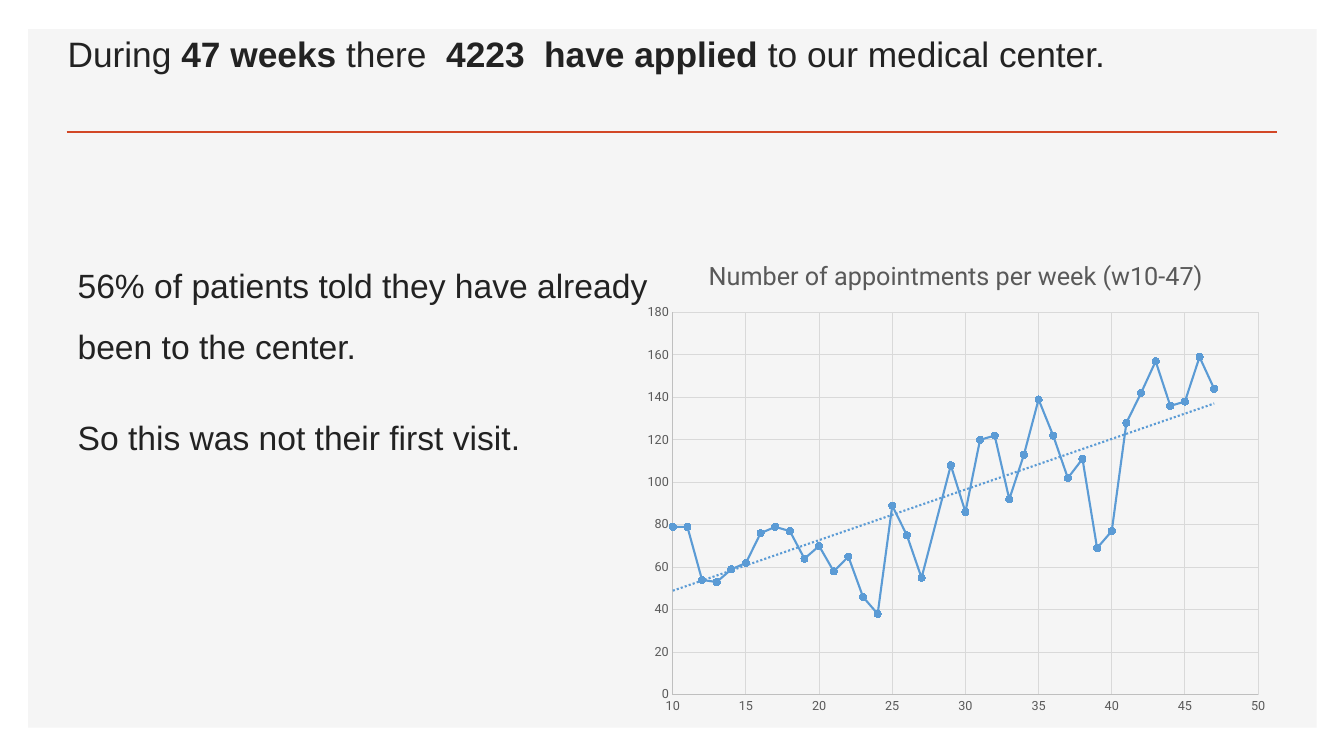
from lxml import etree
from pptx import Presentation
from pptx.chart.data import XyChartData
from pptx.dml.color import RGBColor
from pptx.enum.chart import XL_CHART_TYPE as ChartType, XL_MARKER_STYLE as Marker
from pptx.enum.chart import XL_TICK_MARK as TickMark
from pptx.enum.shapes import MSO_CONNECTOR as Connector, MSO_SHAPE as Shape
from pptx.enum.text import MSO_ANCHOR as Anchor, MSO_AUTO_SIZE as AutoSize, PP_ALIGN as Align
from pptx.oxml import parse_xml
from pptx.oxml.ns import nsdecls, qn
from pptx.util import Inches, Pt

COLORS = {
    "panel": "F5F5F5", "rule": "D24726", "text": "222222", "series": "5B9BD5",
    "label": "595959", "axis": "BFBFBF", "grid": "D9D9D9",
}
WEEKS = [*range(10, 28), *range(29, 48)]
APPOINTMENTS = [
    79, 79, 54, 53, 59, 62, 76, 79, 77, 64, 70, 58, 65, 46, 38, 89, 75, 55,
    108, 86, 120, 122, 92, 113, 139, 122, 102, 111, 69, 77, 128, 142, 157,
    136, 138, 159, 144,
]


def color(name):
    return RGBColor.from_string(COLORS[name])


def write(paragraph, runs, size, font="Arial", fill="text", line_spacing=1.0, before=0, after=0):
    """Fill a left-aligned, unbulleted paragraph with (text, bold) runs."""
    properties = paragraph._p.get_or_add_pPr()
    properties.set("marL", "0")
    properties.set("indent", "0")
    etree.SubElement(properties, qn("a:buNone"))
    paragraph.alignment = Align.LEFT
    paragraph.line_spacing = line_spacing
    paragraph.space_before, paragraph.space_after = Pt(before), Pt(after)
    for text, bold in runs:
        run = paragraph.add_run()
        run.text = text
        run.font.name, run.font.size, run.font.bold = font, Pt(size), bold
        run.font.color.rgb = color(fill)


def place(shape, box):
    shape.left, shape.top, shape.width, shape.height = map(Inches, box)


def style_line(line, name, width):
    line.color.rgb = color(name)
    line.width = Pt(width)


def add_background(slide, box):
    """Put the panel and the heading rule behind the placeholders."""
    left, top, width, height = box
    panel = slide.shapes.add_shape(Shape.RECTANGLE, *map(Inches, box))
    panel.shadow.inherit = False
    panel.fill.solid()
    panel.fill.fore_color.rgb = color("panel")
    panel.line.fill.background()

    rule_y = Inches(top + 1.02)
    rule = slide.shapes.add_connector(
        Connector.STRAIGHT, Inches(left + 0.38), rule_y, Inches(left + width - 0.39), rule_y)
    style_line(rule.line, "rule", 2)
    etree.SubElement(rule.element.spPr, qn("a:effectLst"))

    tree = panel.element.getparent()
    for index, shape in enumerate((panel, rule)):
        tree.insert(2 + index, shape.element)


def add_heading(slide, box):
    title = slide.shapes.title
    place(title, box)
    frame = title.text_frame
    frame.auto_size, frame.word_wrap = AutoSize.NONE, True
    frame.vertical_anchor = Anchor.BOTTOM
    frame.margin_bottom = Inches(0.45)
    write(frame.paragraphs[0], [
        ("During ", False), ("47 weeks ", True), ("there  ", False),
        ("4223  have applied ", True), ("to our medical center.", False),
    ], size=25.2)


def add_findings(slide, box):
    body = slide.placeholders[1]
    place(body, box)
    frame = body.text_frame
    frame.auto_size, frame.word_wrap = AutoSize.NONE, True
    frame.vertical_anchor = Anchor.TOP
    findings = (
        "56% of patients told they have already been to the center.",
        "So this was not their first visit.",
    )
    for index, text in enumerate(findings):
        paragraph = frame.add_paragraph() if index else frame.paragraphs[0]
        write(paragraph, [(text, False)], size=24, line_spacing=1.5,
              before=10 if index else 0, after=12)


def style_axis(axis, low, high, step):
    axis.minimum_scale, axis.maximum_scale, axis.major_unit = low, high, step
    axis.major_tick_mark = axis.minor_tick_mark = TickMark.NONE
    axis.has_major_gridlines = True
    style_line(axis.major_gridlines.format.line, "grid", 0.75)
    style_line(axis.format.line, "axis", 0.75)
    font = axis.tick_labels.font
    font.name, font.size = "Roboto", Pt(9)
    font.color.rgb = color("label")


def add_trend_line(series):
    trend = parse_xml(
        f'<c:trendline {nsdecls("c", "a")}><c:spPr><a:ln w="{Pt(1.5)}"><a:solidFill>'
        f'<a:srgbClr val="{COLORS["series"]}"/></a:solidFill><a:prstDash val="sysDot"/></a:ln>'
        '</c:spPr><c:trendlineType val="linear"/><c:dispRSqr val="0"/><c:dispEq val="0"/>'
        '</c:trendline>')
    series._element.find(qn("c:xVal")).addprevious(trend)


def fix_plot_area(chart, x, y, w, h):
    """Set the inner plot area as fractions of the chart."""
    plot_area = chart._chartSpace.chart.plotArea
    for old in plot_area.findall(qn("c:layout")):
        plot_area.remove(old)
    sizes = "".join(f'<c:{key} val="{value}"/>' for key, value in zip("xywh", (x, y, w, h)))
    plot_area.insert(0, parse_xml(
        f'<c:layout {nsdecls("c")}><c:manualLayout><c:layoutTarget val="inner"/>'
        f'<c:xMode val="edge"/><c:yMode val="edge"/>{sizes}</c:manualLayout></c:layout>'))


def add_appointments_chart(slide, box):
    data = XyChartData()
    points = data.add_series("Series 1")
    for week, count in zip(WEEKS, APPOINTMENTS):
        points.add_data_point(week, count)
    chart = slide.shapes.add_chart(ChartType.XY_SCATTER_LINES, *map(Inches, box), data).chart
    chart.has_legend = False
    chart.font.name, chart.font.size = "Roboto", Pt(10)
    chart.has_title = True
    write(chart.chart_title.text_frame.paragraphs[0],
          [("Number of appointments per week (w10-47)", False)],
          size=18, font="Roboto", fill="label")
    style_axis(chart.category_axis, 10, 50, 5)
    style_axis(chart.value_axis, 0, 180, 20)

    plot = chart.plots[0]
    plot.vary_by_categories = False
    series = plot.series[0]
    series.smooth = False
    style_line(series.format.line, "series", 1.5)
    series.marker.style, series.marker.size = Marker.CIRCLE, 5
    series.marker.format.fill.solid()
    series.marker.format.fill.fore_color.rgb = color("series")
    style_line(series.marker.format.line, "series", 0.75)
    add_trend_line(series)
    fix_plot_area(chart, 0.06, 0.15, 0.91, 0.79)


def main():
    presentation = Presentation()
    presentation.slide_width, presentation.slide_height = Inches(13.33), Inches(7.5)
    slide = presentation.slides.add_slide(presentation.slide_layouts[1])
    add_background(slide, (0.28, 0.29, 12.78, 6.93))
    add_heading(slide, (0.57, 0.49, 11.43, 0.7))
    add_findings(slide, (0.67, 2.38, 5.89, 4.32))
    add_appointments_chart(slide, (6.29, 2.38, 6.38, 4.8))
    presentation.save("out.pptx")


if __name__ == "__main__":
    main()
